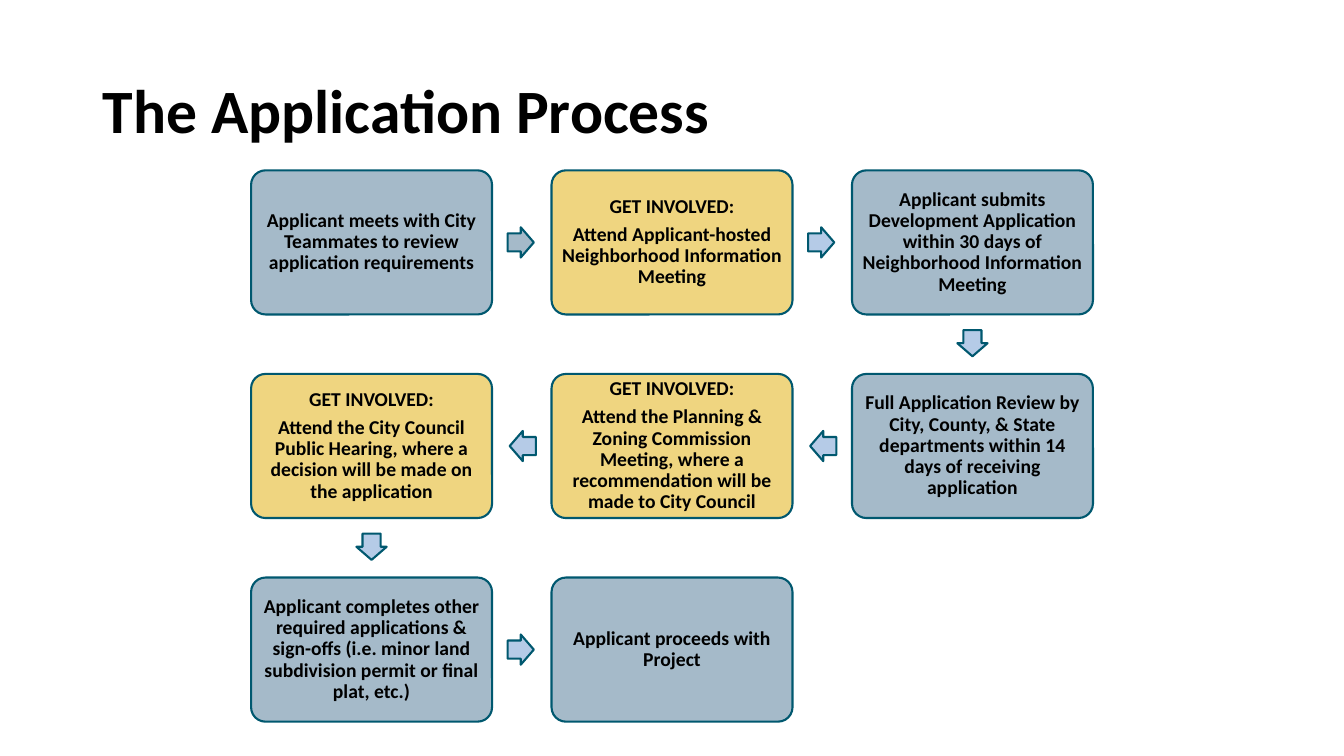
from math import atan2, degrees

from pptx import Presentation
from pptx.dml.color import RGBColor
from pptx.enum.shapes import MSO_SHAPE as Preset
from pptx.enum.text import MSO_ANCHOR as Anchor, MSO_AUTO_SIZE as AutoSize, PP_ALIGN as Align
from pptx.util import Inches, Pt

TITLE = "The Application Process"
INVITE = "GET INVOLVED:"
# Steps in order; those with two paragraphs invite the public.
STEPS = [
    ["Applicant meets with City Teammates to review application requirements"],
    [INVITE, "Attend Applicant-hosted Neighborhood Information Meeting"],
    ["Applicant submits Development Application within 30 days of "
     "Neighborhood Information Meeting"],
    ["Full Application Review by City, County, & State departments within "
     "14 days of receiving application"],
    [INVITE, "Attend the Planning & Zoning Commission Meeting, where a "
     "recommendation will be made to City Council"],
    [INVITE, "Attend the City Council Public Hearing, where a decision "
     "will be made on the application"],
    ["Applicant completes other required applications & sign-offs "
     "(i.e. minor land subdivision permit or final plat, etc.)"],
    ["Applicant proceeds with Project"],
]
COLORS = {"step": "A5BAC9", "invite": "EFD580", "arrow": "B5CBE7",
          "outline": "00586F", "text": "000000"}
FONT = "Calibri"

COLUMNS = 3
LEFT, TOP = 2.49, 1.69
CARD_W, CARD_H, GAP = 2.39, 1.43, 0.59
ARROW_W, ARROW_H = 0.26, 0.3
ARROW_SHIFT = 0.01  # arrows sit slightly nearer the step they leave


def color(key):
    return RGBColor.from_string(COLORS[key])


def card_center(index):
    """Centre of a step; every second row runs from right to left."""
    row, column = divmod(index, COLUMNS)
    if row % 2:
        column = COLUMNS - 1 - column
    return (LEFT + CARD_W / 2 + column * (CARD_W + GAP),
            TOP + CARD_H / 2 + row * (CARD_H + GAP))


def write(frame, paragraphs, size, align, space_after=0):
    frame.text = "\n".join(paragraphs)
    frame.word_wrap = True
    frame.auto_size = AutoSize.NONE
    frame.vertical_anchor = Anchor.MIDDLE
    font_format = {"name": FONT, "size": Pt(size), "bold": True}
    for paragraph in frame.paragraphs:
        paragraph.alignment = align
        paragraph.line_spacing = 0.9
        paragraph.space_before = Pt(0)
        paragraph.space_after = Pt(space_after)
        font = paragraph.runs[0].font
        for attribute, value in font_format.items():
            setattr(font, attribute, value)
        font.color.rgb = color("text")


def add_outlined(slide, preset, center, size, fill, adjustments):
    (x, y), (width, height) = center, size
    shape = slide.shapes.add_shape(preset, Inches(x - width / 2), Inches(y - height / 2),
                                   Inches(width), Inches(height))
    for position, value in enumerate(adjustments):
        shape.adjustments[position] = value
    shape.shadow.inherit = False
    shape.fill.solid()
    shape.fill.fore_color.rgb = color(fill)
    shape.line.color.rgb = color("outline")
    shape.line.width = Pt(1.5)
    return shape


def add_card(slide, index):
    paragraphs = STEPS[index]
    fill = "invite" if paragraphs[0] == INVITE else "step"
    card = add_outlined(slide, Preset.ROUNDED_RECTANGLE, card_center(index),
                        (CARD_W, CARD_H), fill, [0.1])
    for side in ("left", "top", "right", "bottom"):
        setattr(card.text_frame, f"margin_{side}", Inches(0.06))
    write(card.text_frame, paragraphs, 14, Align.CENTER, space_after=4.9)


def add_arrow(slide, index):
    """Arrow halfway from a step to the next, turned towards it."""
    (x1, y1), (x2, y2) = card_center(index), card_center(index + 1)
    distance = abs(x2 - x1) + abs(y2 - y1)
    center = ((x1 + x2) / 2 - ARROW_SHIFT * (x2 - x1) / distance,
              (y1 + y2) / 2 - ARROW_SHIFT * (y2 - y1) / distance)
    arrow = add_outlined(slide, Preset.RIGHT_ARROW, center, (ARROW_W, ARROW_H),
                         "arrow" if index else "step", [0.6, 0.5])
    arrow.rotation = round(degrees(atan2(y2 - y1, x2 - x1)))


def main():
    deck = Presentation()
    deck.slide_width, deck.slide_height = Inches(13.33), Inches(7.5)
    slide = deck.slides.add_slide(deck.slide_layouts[5])

    title = slide.shapes.title
    title.left, title.top = Inches(0.92), Inches(0.4)
    title.width, title.height = Inches(11.5), Inches(1.45)
    write(title.text_frame, [TITLE], 44, Align.LEFT)

    for index in range(len(STEPS)):
        add_card(slide, index)
        if index < len(STEPS) - 1:
            add_arrow(slide, index)

    deck.save("out.pptx")


if __name__ == "__main__":
    main()
